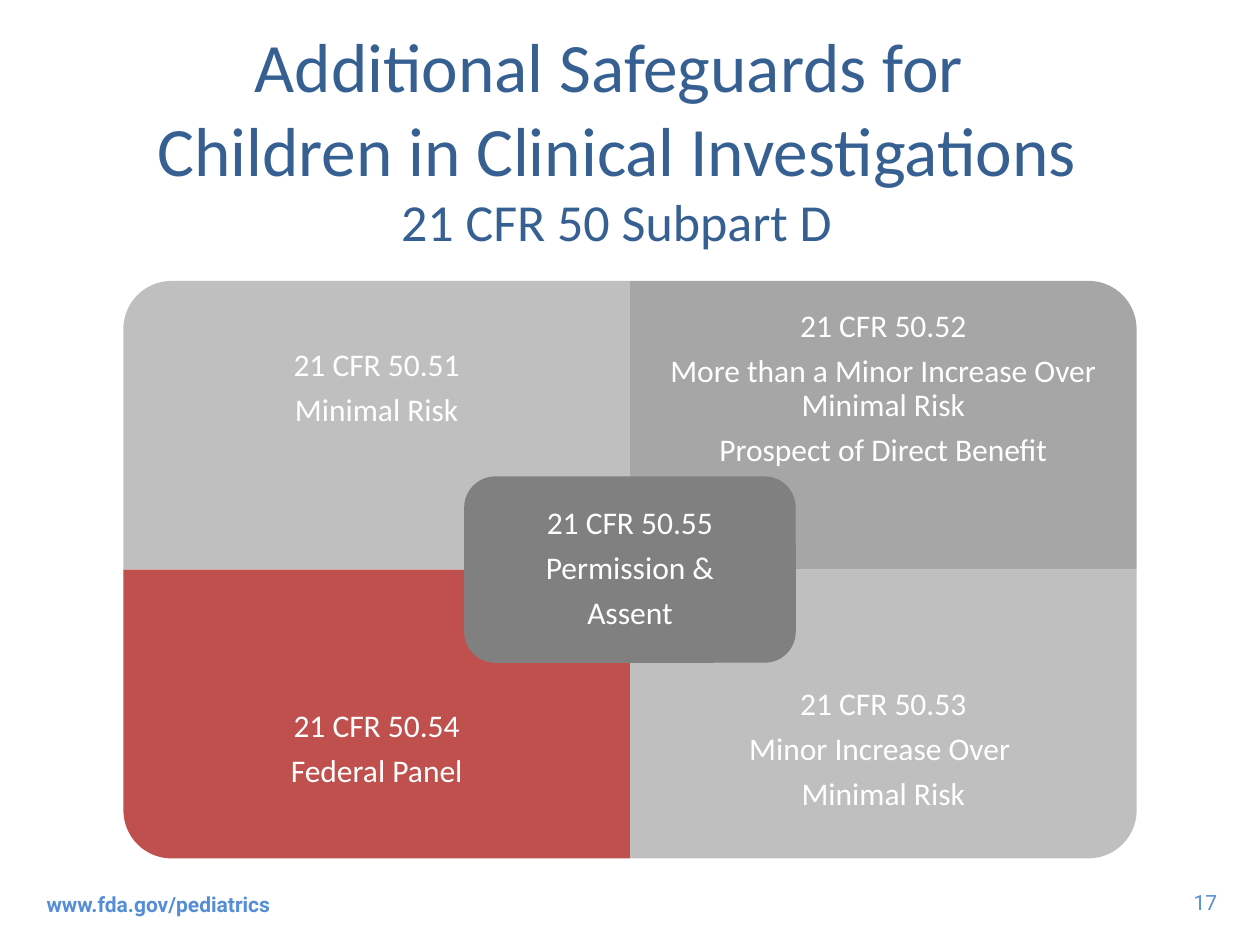
"""Build the slide on additional safeguards for children in clinical investigations."""
from pptx import Presentation
from pptx.dml.color import RGBColor
from pptx.enum.shapes import MSO_SHAPE as Shape
from pptx.enum.text import MSO_ANCHOR as Anchor, MSO_AUTO_SIZE as AutoSize, PP_ALIGN as Align
from pptx.util import Pt

COLORS = {"title": "376092", "footer": "558ED5", "white": "FFFFFF", "light": "BFBFBF",
          "mid": "A6A6A6", "dark": "808080", "red": "C0504D"}
TITLE = [(["Additional Safeguards for ", "Children in Clinical Investigations"], 39.6),
         (["21 CFR 50 Subpart D"], 29.7)]
QUADRANTS = [
    (0, 0, 270, "light", ["21 CFR 50.51", "Minimal Risk"]),
    (1, 0, 0, "mid", ["21 CFR 50.52", "More than a Minor Increase Over Minimal Risk",
                      "Prospect of Direct Benefit"]),
    (0, 1, 180, "red", ["21 CFR 50.54", "Federal Panel"]),
    (1, 1, 90, "light", ["21 CFR 50.53", "Minor Increase Over ", "Minimal Risk"]),
]
CENTER = ["21 CFR 50.55", "Permission &", "Assent"]
FOOTERS = [("www.fda.gov/pediatrics", (19.5, 502.5, 228, 28.8), Align.LEFT, True),
           ("17", (673, 504.7, 29.7, 21.8), Align.RIGHT, False)]

MID_X, MID_Y = 360, 325.5
QUAD_W, QUAD_H = 289.5, 165
LABEL_H = QUAD_H * 0.75
CENTER_W, CENTER_H = 189.5, 106.5


def rgb(name):
    return RGBColor.from_string(COLORS[name])


def style(p, font, size, color, align, bold=False):
    p.alignment = align
    p.font.name, p.font.size, p.font.bold = font, Pt(size), bold
    p.font.color.rgb = rgb(color)


def add_block(s, kind, x, y, w, h, color, rotation=0):
    if rotation % 180:
        x, y, w, h = x + (w - h) / 2, y + (h - w) / 2, h, w
    sp = s.shapes.add_shape(kind, Pt(x), Pt(y), Pt(w), Pt(h))
    sp.rotation = rotation
    sp.shadow.inherit = False
    sp.fill.solid()
    sp.fill.fore_color.rgb = rgb(color)
    sp.line.fill.background()
    return sp


def write_lines(tf, lines, inset):
    tf.word_wrap, tf.vertical_anchor = True, Anchor.MIDDLE
    tf.margin_left = tf.margin_right = tf.margin_top = tf.margin_bottom = Pt(inset)
    tf.text = "\n".join(lines)
    for p in tf.paragraphs:
        p.line_spacing, p.space_after = 0.9, Pt(6.3)
        style(p, "Calibri", 18, "white", Align.CENTER)


def add_title(s):
    sp = s.shapes.title
    sp.left, sp.top, sp.width, sp.height = Pt(17.3), Pt(42.5), Pt(670.3), Pt(72.7)
    tf = sp.text_frame
    tf.auto_size, tf.vertical_anchor = AutoSize.NONE, Anchor.MIDDLE
    p = tf.paragraphs[0]
    style(p, "Calibri", TITLE[0][1], "title", Align.CENTER)
    for lines, size in TITLE:
        for line in lines:
            if p.runs:
                p.add_line_break()
            r = p.add_run()
            r.text, r.font.size = line, Pt(size)


def add_matrix(s):
    for col, row, rotation, color, lines in QUADRANTS:
        x, y = MID_X + (col - 1) * QUAD_W, MID_Y + (row - 1) * QUAD_H
        add_block(s, Shape.ROUND_1_RECTANGLE, x, y, QUAD_W, QUAD_H, color, rotation)
        label_y = y + row * (QUAD_H - LABEL_H)
        box = s.shapes.add_textbox(Pt(x), Pt(label_y), Pt(QUAD_W), Pt(LABEL_H))
        write_lines(box.text_frame, lines, 10)
    sp = add_block(s, Shape.ROUNDED_RECTANGLE, MID_X - CENTER_W / 2, MID_Y - CENTER_H / 2,
                   CENTER_W, CENTER_H, "dark")
    write_lines(sp.text_frame, CENTER, 5)


def add_footers(s):
    for text, place, align, bold in FOOTERS:
        tf = s.shapes.add_textbox(*map(Pt, place)).text_frame
        tf.word_wrap, tf.vertical_anchor = bold, Anchor.MIDDLE
        tf.text = text
        style(tf.paragraphs[0], "Roboto", 12, "footer", align, bold)


def main():
    prs = Presentation()
    prs.slide_width, prs.slide_height = Pt(720), Pt(540)
    s = prs.slides.add_slide(prs.slide_layouts[5])
    add_title(s)
    add_matrix(s)
    add_footers(s)
    prs.save("out.pptx")


if __name__ == "__main__":
    main()
